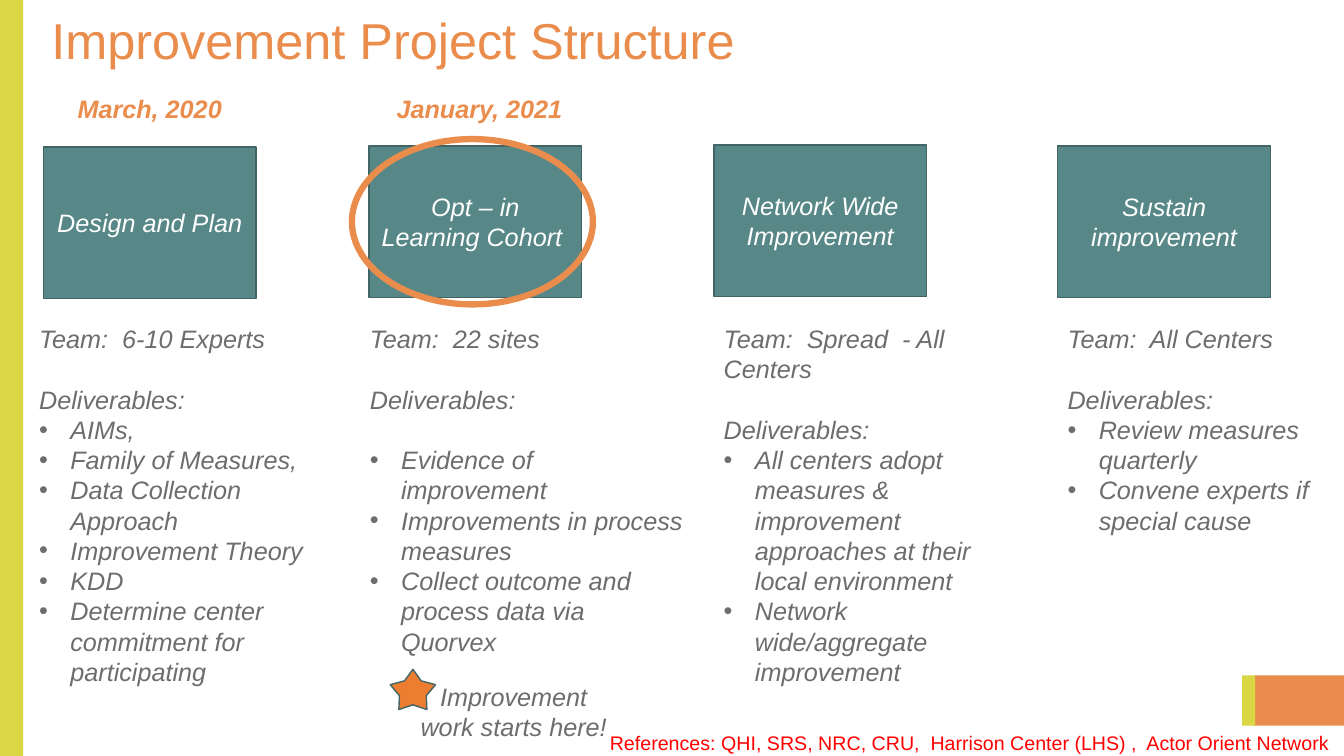
"""Build the Improvement Project Structure slide."""
from lxml import etree
from pptx import Presentation
from pptx.dml.color import RGBColor
from pptx.enum.shapes import MSO_SHAPE
from pptx.enum.text import MSO_ANCHOR, PP_ALIGN
from pptx.oxml.ns import qn
from pptx.util import Inches, Pt

RECTANGLE, OVAL, STAR = MSO_SHAPE.RECTANGLE, MSO_SHAPE.OVAL, MSO_SHAPE.STAR_5_POINT
LEFT, CENTER = PP_ALIGN.LEFT, PP_ALIGN.CENTER
TOP, MIDDLE = MSO_ANCHOR.TOP, MSO_ANCHOR.MIDDLE
ORANGE, LIME, TEAL, DARK_TEAL = "EA8D4C", "DAD644", "578887", "406564"
GRAY, WHITE, RED, STAR_ORANGE = "6C6D6C", "FFFFFF", "FF0000", "ED7D31"
BODY = {"name": "Arial", "size": Pt(18), "italic": True}
BLANK_LINE = Pt(21.6)
BULLET_INDENT = Inches(0.31)


def add_outline(kind, place, fill=None, line=None, width=1):
    """Add a preset shape with plain fill and line."""
    shape = page.shapes.add_shape(kind, *map(Inches, place))
    shape.shadow.inherit = False
    if fill:
        shape.fill.solid()
        shape.fill.fore_color.rgb = RGBColor.from_string(fill)
    else:
        shape.fill.background()
    if line:
        shape.line.color.rgb = RGBColor.from_string(line)
        shape.line.width = Pt(width)
    else:
        shape.line.fill.background()
    return shape


def write(box, lines, color, formats, align=LEFT, anchor=TOP):
    """Write one paragraph per line into a shape and return the paragraphs."""
    frame = box.text_frame
    frame.word_wrap = True
    frame.vertical_anchor = anchor
    frame.text = "\n".join(lines)
    for para in frame.paragraphs:
        para.alignment = align
        for span in para.runs:
            span.font.color.rgb = RGBColor.from_string(color)
            for name, value in formats.items():
                setattr(span.font, name, value)
    return frame.paragraphs


deck = Presentation()
deck.slide_width, deck.slide_height = Inches(13.33), Inches(7.5)
page = deck.slides.add_slide(deck.slide_layouts[5])

title = page.shapes.title
title.left, title.top, title.width, title.height = map(Inches, (0.41, 0.11, 11.5, 0.78))
heading = write(title, ["Improvement Project Structure"], ORANGE,
                {"name": "Arial", "size": Pt(36)}, anchor=MIDDLE)
heading[0].line_spacing = 0.9
title.text_frame.margin_bottom = Inches(0.19)

bars = [
    ((12.44, 6.7, 0.9, 0.5), ORANGE),
    ((12.32, 6.7, 0.13, 0.5), LIME),
    ((0, 0, 0.23, 7.5), LIME),
]
for place, color in bars:
    add_outline(RECTANGLE, place, color)

references = page.shapes.add_textbox(*map(Inches, (5.95, 7.2, 7.38, 0.34)))
write(references,
      ["References: QHI, SRS, NRC, CRU,  Harrison Center (LHS) ,  Actor Orient Network"],
      RED, {"name": "Arial", "size": Pt(14)})

phases = [
    ("Design and Plan", (0.43, 1.46), (0.29, 2.9, 3.74), "Team:  6-10 Experts", 0,
     ["AIMs,", "Family of Measures,", "Data Collection Approach", "Improvement Theory",
      "KDD", "Determine center commitment for participating"]),
    ("Opt – in Learning Cohort ", (3.66, 1.45), (3.57, 3.31, 4.04), "Team:  22 sites",
     BLANK_LINE,
     ["Evidence of improvement", "Improvements in process measures",
      "Collect outcome and process data via Quorvex"]),
    ("Network Wide Improvement", (7.08, 1.44), (7.08, 2.9, 3.74),
     "Team:  Spread  - All Centers", 0,
     ["All centers adopt measures & improvement approaches at their local environment",
      "Network wide/aggregate improvement"]),
    ("Sustain improvement", (10.49, 1.45), (10.49, 2.9, 2.22), "Team:  All Centers", 0,
     ["Review measures quarterly", "Convene experts if special cause"]),
]
for name, corner, (left, width, height), team, list_gap, deliverables in phases:
    phase_box = add_outline(RECTANGLE, (*corner, 2.11, 1.5), TEAL, DARK_TEAL)
    write(phase_box, [name], WHITE, BODY, CENTER, MIDDLE)
    details = page.shapes.add_textbox(*map(Inches, (left, 3.16, width, height)))
    paras = write(details, [team, "Deliverables:", *deliverables], GRAY, BODY)
    paras[1].space_before = BLANK_LINE
    paras[2].space_before = list_gap
    for para in paras[2:]:
        properties = para._p.get_or_add_pPr()
        properties.set("marL", str(BULLET_INDENT))
        properties.set("indent", str(-BULLET_INDENT))
        etree.SubElement(properties, qn("a:buFont"), typeface="Arial")
        etree.SubElement(properties, qn("a:buChar"), char="•")

start_note = page.shapes.add_textbox(*map(Inches, (4.04, 6.71, 2.11, 0.71)))
write(start_note, ["Improvement work starts here!"], GRAY, BODY, CENTER)
star = add_outline(STAR, (3.87, 6.64, 0.45, 0.4), STAR_ORANGE, DARK_TEAL)
star.adjustments[0] = 0.297
add_outline(OVAL, (3.49, 1.38, 2.39, 1.64), line=ORANGE, width=4.5)

for date, left in [("March, 2020", 0.43), ("January, 2021", 3.7)]:
    date_box = page.shapes.add_textbox(*map(Inches, (left, 0.88, 2.11, 0.4)))
    write(date_box, [date], ORANGE, {**BODY, "bold": True}, CENTER)

deck.save("out.pptx")
